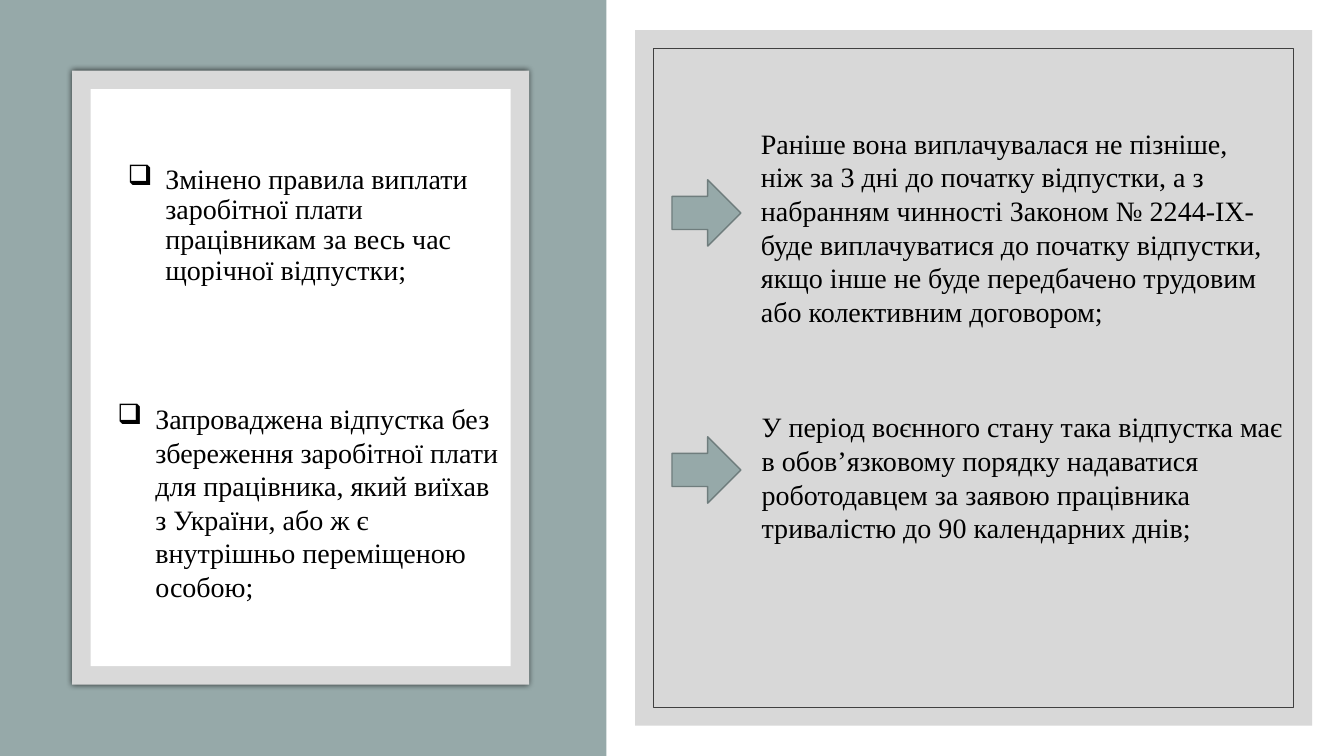
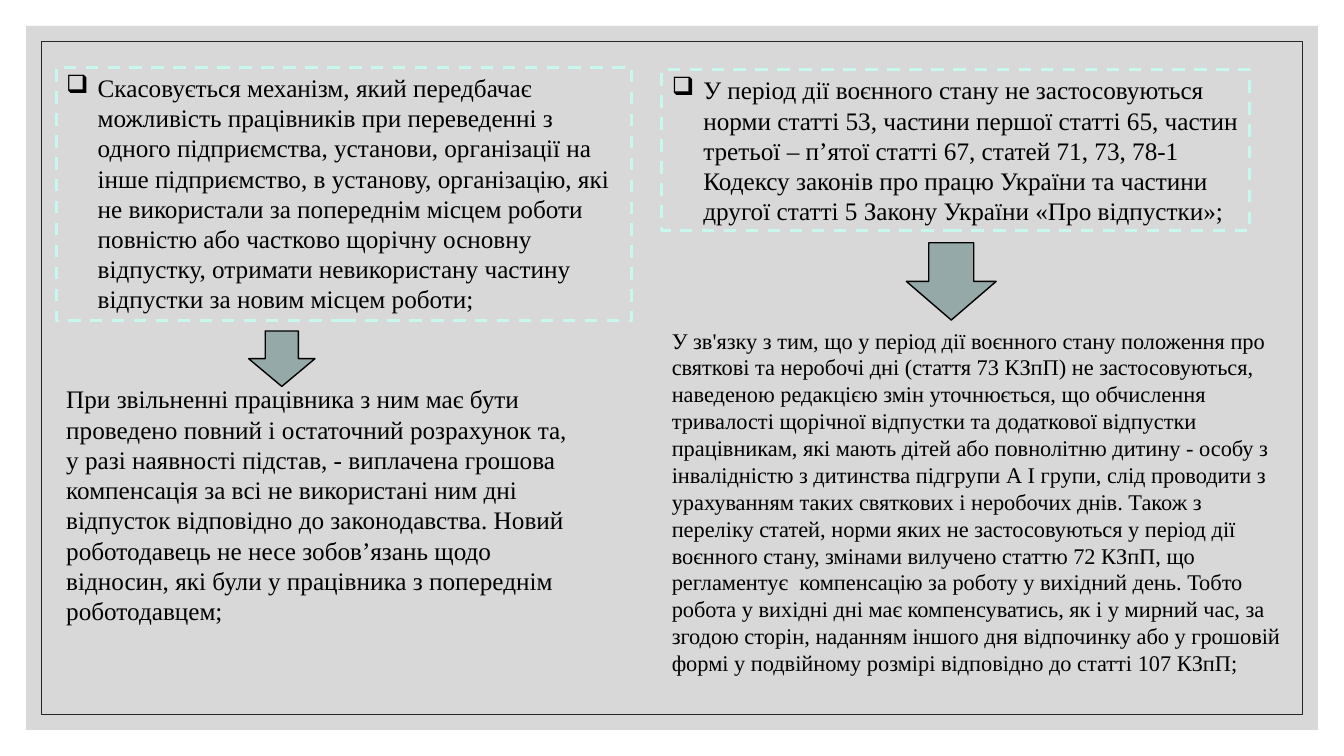
from dataclasses import dataclass

from lxml.etree import SubElement
from pptx import Presentation
from pptx.dml.color import RGBColor
from pptx.enum.dml import MSO_LINE_DASH_STYLE as Dash
from pptx.enum.shapes import MSO_SHAPE as Preset
from pptx.enum.text import MSO_ANCHOR as Anchor, MSO_AUTO_SIZE as AutoSize, PP_ALIGN as Align
from pptx.oxml.ns import qn
from pptx.util import Inches, Pt

COLUMNS, ROWS = 16, 9


@dataclass(frozen=True)
class Theme:
    font: str = "Times New Roman"
    text: str = "000000"
    paper: str = "FFFFFF"
    sage: str = "96A9A9"
    sage_edge: str = "6F7D7D"
    card: str = "D9D9D9"
    veil: str = "BFBFBF"
    veil_opacity: int = 60
    dark_edge: str = "404040"
    frame_edge: str = "262626"
    mint: str = "C8F7EE"
    large: int = 20
    body: int = 18
    small: int = 16
    large_indent: float = 27
    body_indent: float = 22.5
    paragraph_gap: int = 6
    hairline: float = 0.5
    arrow_line: float = 1
    dashed_line: float = 2.25


def write_text(shape, text, *, theme, size, bullet_indent=0, after=0,
               spacing=None, anchor=Anchor.TOP, grow=True):
    """Put one formatted paragraph into a shape or text box."""
    frame = shape.text_frame
    frame.word_wrap = True
    frame.vertical_anchor = anchor
    frame.auto_size = AutoSize.SHAPE_TO_FIT_TEXT if grow else AutoSize.NONE
    paragraph = frame.paragraphs[0]
    paragraph.alignment = Align.LEFT
    paragraph.space_after = Pt(after)
    if spacing:
        paragraph.line_spacing = spacing
    run = paragraph.add_run()
    run.text = text
    run.font.name, run.font.size = theme.font, Pt(size)
    run.font.color.rgb = RGBColor.from_string(theme.text)
    if bullet_indent:
        properties = paragraph._p.get_or_add_pPr()
        properties.set("marL", str(Pt(bullet_indent)))
        properties.set("indent", str(-Pt(bullet_indent)))
        SubElement(properties, qn("a:buChar"), char="❑")


class Deck:
    """Holds the style and the current slide; places are (column, row, columns, rows)."""

    def __init__(self, theme):
        self.theme = theme
        self.presentation = Presentation()
        self.presentation.slide_width = Inches(13.33)
        self.presentation.slide_height = Inches(7.5)
        self.slide = None

    def new_slide(self):
        self.slide = self.presentation.slides.add_slide(self.presentation.slide_layouts[6])
        background = self.slide.background.fill
        background.solid()
        background.fore_color.rgb = RGBColor.from_string(self.theme.paper)

    def place(self, column, row, columns, rows):
        across = self.presentation.slide_width / COLUMNS
        down = self.presentation.slide_height / ROWS
        return [round(length) for length in
                (column * across, row * down, columns * across, rows * down)]

    def block(self, area, preset=Preset.RECTANGLE, fill=None, opacity=None,
              edge=None, width=1, dash=None):
        shape = self.slide.shapes.add_shape(preset, *self.place(*area))
        shape.shadow.inherit = False
        if fill:
            shape.fill.solid()
            shape.fill.fore_color.rgb = RGBColor.from_string(fill)
        else:
            shape.fill.background()
        if opacity:
            color = shape._element.spPr.find(qn("a:solidFill")).find(qn("a:srgbClr"))
            SubElement(color, qn("a:alpha"), val=str(opacity * 1000))
        if edge:
            shape.line.color.rgb = RGBColor.from_string(edge)
            shape.line.width = Pt(width)
            if dash:
                shape.line.dash_style = dash
        else:
            shape.line.fill.background()
        return shape

    def glow(self, shape):
        effects = shape._element.spPr.find(qn("a:effectLst"))
        shadow = SubElement(effects, qn("a:outerShdw"), blurRad=str(Pt(4)), dist="0", dir="0",
                            algn="ctr", rotWithShape="0")
        color = SubElement(shadow, qn("a:srgbClr"), val="000000")
        SubElement(color, qn("a:alpha"), val="66000")

    @staticmethod
    def inset(area, margin):
        column, row, columns, rows = area
        return column + margin, row + margin, columns - 2 * margin, rows - 2 * margin

    def card(self, area, margin):
        self.glow(self.block(area, fill=self.theme.card))
        self.block(self.inset(area, margin), fill=self.theme.paper)

    def veiled_panel(self, area, margin, edge):
        self.block(area, fill=self.theme.veil, opacity=self.theme.veil_opacity)
        self.block(self.inset(area, margin), edge=edge, width=self.theme.hairline)

    def text(self, area, text, **style):
        box = self.slide.shapes.add_textbox(*self.place(*area))
        write_text(box, text, theme=self.theme, **style)

    def dashed_note(self, area, text):
        note = self.block(area, edge=self.theme.mint, width=self.theme.dashed_line, dash=Dash.DASH)
        write_text(note, text, theme=self.theme, size=self.theme.body,
                   bullet_indent=self.theme.body_indent)

    def arrow(self, area, preset, edge):
        self.block(area, preset, fill=self.theme.sage, edge=edge, width=self.theme.arrow_line)


def build_pay_and_leave(deck):
    theme = deck.theme
    deck.new_slide()

    # Panels
    deck.block((0, 0, 7.22, ROWS), fill=theme.sage)
    deck.card((0.86, 0.84, 5.44, 7.31), 0.22)
    deck.veiled_panel((7.56, 0.36, 8.06, 8.28), 0.22, theme.dark_edge)

    # Changes on the left, explanations on the right
    large = dict(size=theme.large, after=theme.paragraph_gap)
    middle = dict(anchor=Anchor.MIDDLE, grow=False)
    deck.text((1.4, 1.72, 4.57, 1.93),
              "Змінено правила виплати заробітної плати працівникам за весь час "
              "щорічної відпустки;",
              bullet_indent=theme.large_indent, spacing=0.9, **large, **middle)
    deck.text((8.94, 1.06, 6.35, 3.29),
              "Раніше вона виплачувалася не пізніше, ніж за 3 дні до початку відпустки, "
              "а з набранням чинності Законом № 2244-IX- буде виплачуватися до початку "
              "відпустки, якщо інше не буде передбачено трудовим або колективним договором;",
              **large, **middle)
    deck.text((1.28, 4.72, 4.8, 2.54),
              "Запроваджена відпустка без збереження заробітної плати для працівника, "
              "який виїхав з України, або ж є внутрішньо переміщеною особою;",
              bullet_indent=theme.large_indent, **large)
    deck.text((8.95, 4.82, 6.46, 2.2),
              "У період воєнного стану така відпустка має в обов’язковому порядку "
              "надаватися роботодавцем за заявою працівника тривалістю до 90 "
              "календарних днів;", **large)

    # Arrows
    for row in (2.14, 5.2):
        deck.arrow((8, row, 0.82, 0.79), Preset.RIGHT_ARROW, theme.sage_edge)


def build_transfer_and_holidays(deck):
    theme = deck.theme
    deck.new_slide()
    deck.veiled_panel((0.31, 0.31, 15.38, 8.38), 0.18, theme.frame_edge)

    # Transfer to a new employer
    deck.dashed_note((0.67, 0.8, 6.85, 3.02),
                     "Скасовується механізм, який передбачає можливість працівників при "
                     "переведенні з одного підприємства, установи, організації на інше "
                     "підприємство, в установу, організацію, які не використали за попереднім "
                     "місцем роботи повністю або частково щорічну основну відпустку, отримати "
                     "невикористану частину відпустки за новим місцем роботи;")
    deck.text((0.67, 4.51, 6.38, 3.14),
              "При звільненні працівника з ним має бути проведено повний і остаточний "
              "розрахунок та, у разі наявності підстав, - виплачена грошова компенсація за "
              "всі не використані ним дні відпусток відповідно до законодавства. Новий "
              "роботодавець не несе зобов’язань щодо відносин, які були у працівника з "
              "попереднім роботодавцем;", size=theme.body)

    # Holidays under martial law
    deck.dashed_note((7.88, 0.83, 7, 1.92),
                     "У період дії воєнного стану не застосовуються норми статті 53, частини "
                     "першої статті 65, частин третьої – п’ятої статті 67, статей 71, 73, 78-1 "
                     "Кодексу законів про працю України та частини другої статті 5 Закону "
                     "України «Про відпустки»;")
    deck.text((7.88, 3.83, 7.58, 4.48),
              "У зв'язку з тим, що у період дії воєнного стану положення про святкові та "
              "неробочі дні (стаття 73 КЗпП) не застосовуються, наведеною редакцією змін "
              "уточнюється, що обчислення тривалості щорічної відпустки та додаткової "
              "відпустки працівникам, які мають дітей або повнолітню дитину - особу з "
              "інвалідністю з дитинства підгрупи А I групи, слід проводити з урахуванням "
              "таких святкових і неробочих днів. Також з переліку статей, норми яких не "
              "застосовуються у період дії воєнного стану, змінами вилучено статтю 72 КЗпП, "
              "що регламентує  компенсацію за роботу у вихідний день. Тобто робота у вихідні "
              "дні має компенсуватись, як і у мирний час, за згодою сторін, наданням іншого "
              "дня відпочинку або у грошовій формі у подвійному розмірі відповідно до статті "
              "107 КЗпП;", size=theme.small)

    # Arrows
    for area in ((2.96, 3.94, 0.79, 0.66), (10.79, 2.89, 1.07, 0.92)):
        deck.arrow(area, Preset.DOWN_ARROW, theme.text)


def main():
    deck = Deck(Theme())
    build_pay_and_leave(deck)
    build_transfer_and_holidays(deck)
    deck.presentation.save("out.pptx")


if __name__ == "__main__":
    main()
